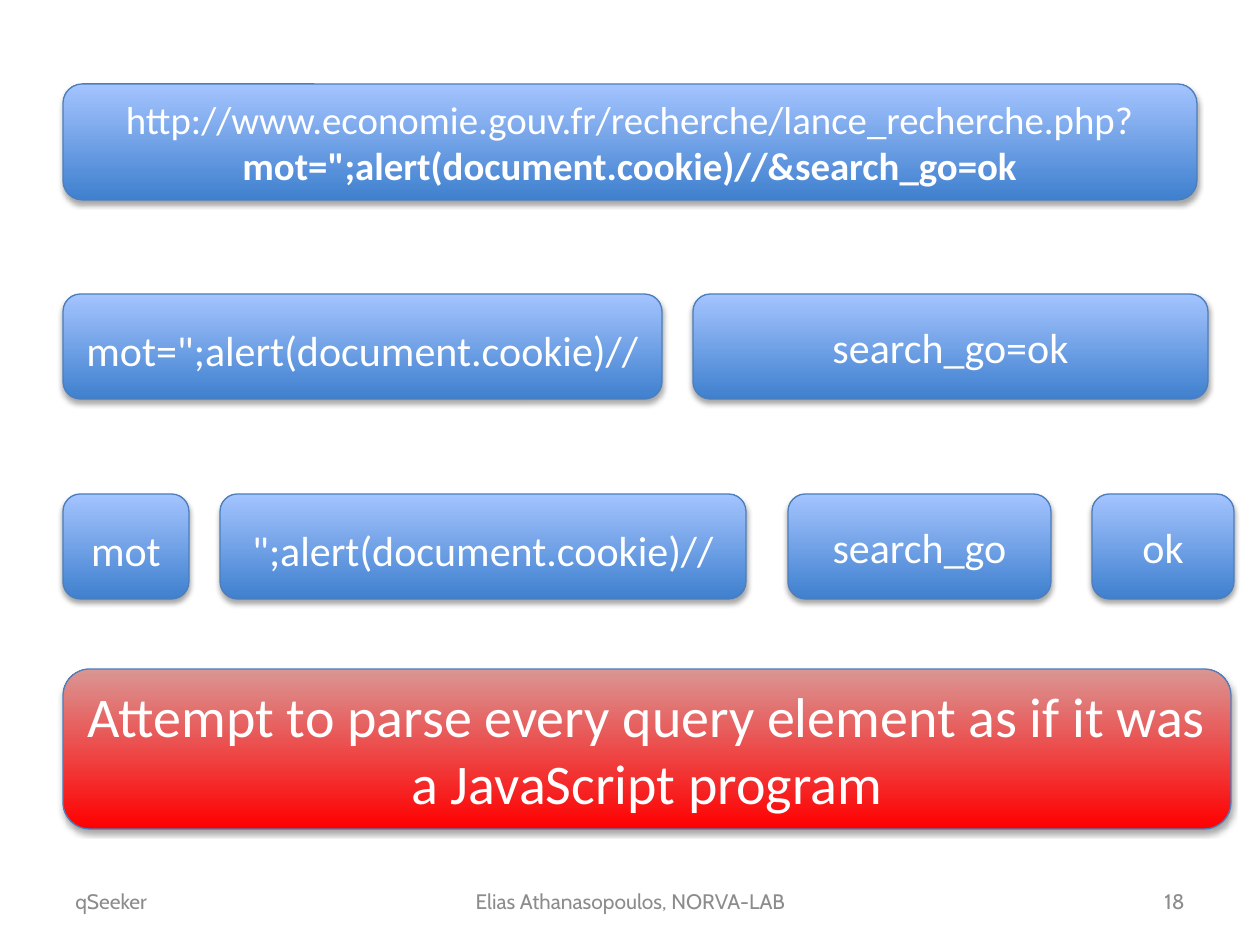
import pptx
import pptx.util
import pptx.dml.color
import pptx.enum.shapes
import pptx.enum.text
import pptx.oxml
import pptx.oxml.ns

ALIGN = pptx.enum.text.PP_ALIGN
MIDDLE = pptx.enum.text.MSO_ANCHOR.MIDDLE
ROUND = pptx.enum.shapes.MSO_SHAPE.ROUNDED_RECTANGLE

# Content: each box is (left, width, low text, runs); a run is (text, bold)
ROWS = [
    # top, height, point size, fill, boxes
    (84, 116, 22.2, "blue", [
        (63, 1134, False, [
            ("http://www.economie.gouv.fr/recherche/lance_recherche.php?", False),
            ('mot=";alert(document.cookie)//&search_go=ok', True)])]),
    (294, 105, 24, "blue", [
        (63, 599, True, [('mot=";alert(document.cookie)//', False)]),
        (693, 515, False, [("search_go=ok", False)])]),
    (494, 105, 24, "blue", [
        (63, 126, True, [("mot", False)]),
        (220, 526, True, [('";alert(document.cookie)//', False)]),
        (788, 263, False, [("search_go", False)]),
        (1092, 142, False, [("ok", False)])]),
    (669, 160, 32, "red", [
        (63, 1168, False, [
            ("Attempt to parse every query element as if it was "
             "a JavaScript program", False)])]),
]
FOOTER = [
    (63, 294, ALIGN.LEFT, "qSeeker"),
    (431, 399, ALIGN.CENTER, "Elias Athanasopoulos, NORVA-LAB"),
    (903, 294, ALIGN.RIGHT, "18"),
]
FOOT_TOP, FOOT_HIGH = 876, 50

THEME = {
    "blue": ("3F80CE", "A4C4FF"),  # bottom, top
    "red": ("FF0000", "D99694"),
    "line": "4B7EBC",
    "text": "FFFFFF",
    "foot": "8C8C8C",
    "font": "Calibri",
    "foot font": "Cabin",
    "foot size": 12,
}
SHADOW = (
    f'<a:effectLst {pptx.oxml.ns.nsdecls("a")}>'
    '<a:outerShdw blurRad="39370" dist="22860" dir="5400000" rotWithShape="0">'
    '<a:srgbClr val="000000"><a:alpha val="35000"/></a:srgbClr>'
    '</a:outerShdw></a:effectLst>')


def px(n):
    return pptx.util.Emu(round(n * 914400 / 126))


def rgb(code):
    return pptx.dml.color.RGBColor.from_string(code)


def write(shape, runs, size, face, color, align):
    frame = shape.text_frame
    frame.word_wrap = True
    frame.vertical_anchor = MIDDLE
    para = frame.paragraphs[0]
    para.alignment = align
    para.font.size = pptx.util.Pt(size)
    para.font.name = face
    para.font.color.rgb = rgb(color)
    for text, bold in runs:
        run = para.add_run()
        run.text = text
        if bold:
            run.font.bold = True


def add_box(slide, area, fill, size, low, runs):
    box = slide.shapes.add_shape(ROUND, *map(px, area))
    box.fill.gradient()
    box.fill.gradient_angle = 90
    for stop, code in zip(box.fill.gradient_stops, THEME[fill]):
        stop.color.rgb = rgb(code)
    box.line.color.rgb = rgb(THEME["line"])
    box.line.width = pptx.util.Pt(0.75)
    # Replace the theme shadow with a soft one below the box
    box.shadow.inherit = False
    props = box._element.spPr
    old = props.find(pptx.oxml.ns.qn("a:effectLst"))
    props.replace(old, pptx.oxml.parse_xml(SHADOW))
    if low:
        box.text_frame.margin_top = pptx.util.Inches(0.1)
    write(box, runs, size, THEME["font"], THEME["text"], ALIGN.CENTER)


def main():
    deck = pptx.Presentation()
    deck.slide_width, deck.slide_height = px(1260), px(945)
    slide = deck.slides.add_slide(deck.slide_layouts[6])

    # Footer line
    for left, wide, align, text in FOOTER:
        note = slide.shapes.add_textbox(
            px(left), px(FOOT_TOP), px(wide), px(FOOT_HIGH))
        write(note, [(text, False)], THEME["foot size"],
              THEME["foot font"], THEME["foot"], align)

    # Rows of boxes
    for top, high, size, fill, boxes in ROWS:
        for left, wide, low, runs in boxes:
            add_box(slide, (left, top, wide, high), fill, size, low, runs)

    deck.save("out.pptx")


if __name__ == "__main__":
    main()
